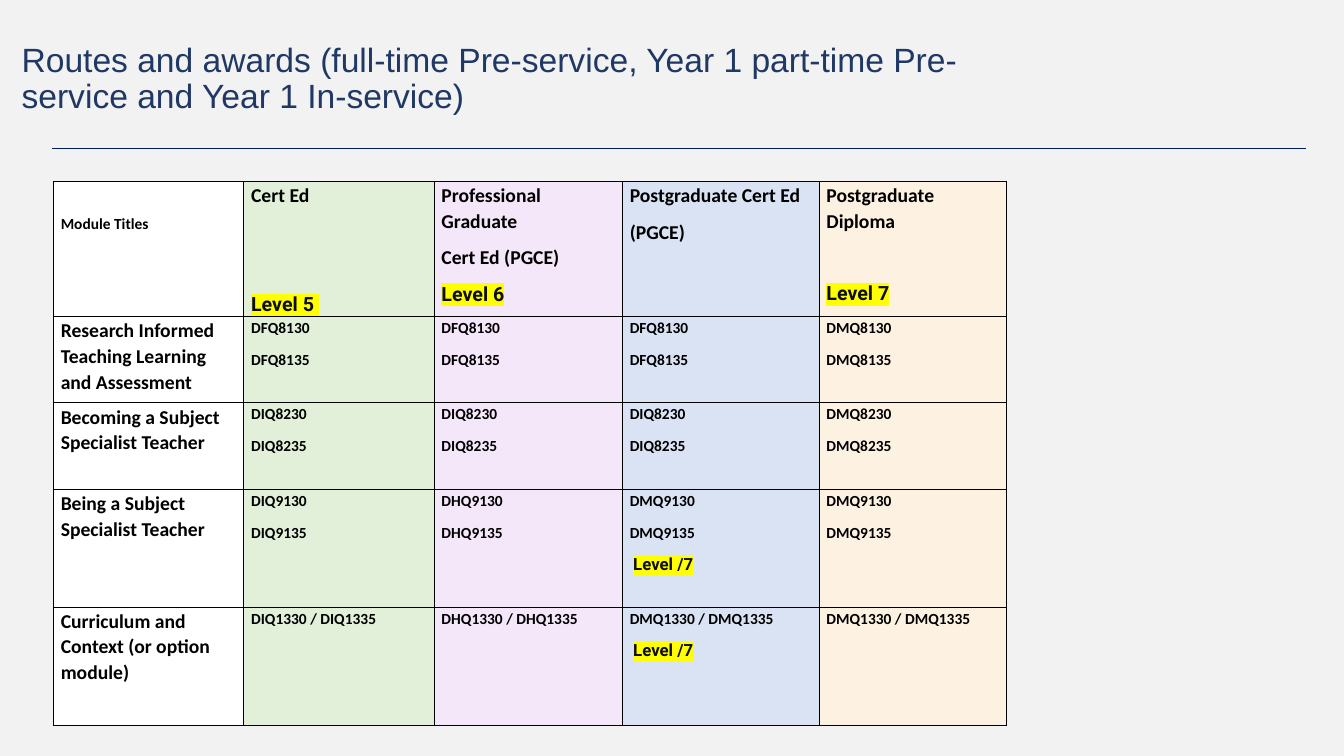
from dataclasses import dataclass

from lxml import etree
from pptx import Presentation
from pptx import util as u
from pptx.dml.color import RGBColor
from pptx.enum import shapes, text
from pptx.oxml import ns

Pt = u.Pt


@dataclass(frozen=True)
class TextStyle:
    size: float
    font: str = "Calibri"
    color: str = "000000"
    bold: bool = True
    highlight: str = ""


@dataclass(frozen=True)
class Theme:
    background: str = "F2F2F2"
    rule: str = "001F60"
    border: str = "000000"
    columns: tuple = ("FFFFFF", "E2F0D9", "F4E7F9", "DAE3F3", "FDF1E1")
    title: TextStyle = TextStyle(24, "Arial", "203864", False)
    heading: TextStyle = TextStyle(14)
    code: TextStyle = TextStyle(11)
    level: TextStyle = TextStyle(14, "Roboto", "0D0D0D", True, "FFFF00")
    small_level: TextStyle = TextStyle(12, "Roboto", "0D0D0D", True, "FFFF00")


@dataclass(frozen=True)
class Line:
    words: str
    style: TextStyle
    before: float = 0
    indent: float = 0


class SlideBuilder:
    def __init__(self, deck, theme):
        self.theme = theme
        self.page = deck.slides.add_slide(deck.slide_layouts[6])
        self.fill(self.page.background.fill, theme.background)

    def fill(self, target, color):
        target.solid()
        target.fore_color.rgb = RGBColor.from_string(color)

    def add_span(self, para, words, style):
        span = para.add_run()
        span.text = words
        font = span.font
        font.size, font.name, font.bold = Pt(style.size), style.font, style.bold
        font.color.rgb = RGBColor.from_string(style.color)
        if style.highlight:
            highlight = etree.Element(ns.qn("a:highlight"))
            etree.SubElement(highlight, ns.qn("a:srgbClr"), val=style.highlight)
            span._r.rPr.find(ns.qn("a:solidFill")).addnext(highlight)

    def add_title(self, words, left, top, width, height):
        box = self.page.shapes.add_textbox(Pt(left), Pt(top), Pt(width), Pt(height))
        frame = box.text_frame
        frame.word_wrap = True
        frame.vertical_anchor = text.MSO_ANCHOR.MIDDLE
        frame.margin_left = 0
        para = frame.paragraphs[0]
        para.line_spacing = 0.9
        self.add_span(para, words, self.theme.title)

    def add_rule(self, left, right, y):
        rule = self.page.shapes.add_connector(
            shapes.MSO_CONNECTOR.STRAIGHT, Pt(left), Pt(y), Pt(right), Pt(y))
        rule.line.width = Pt(0.5)
        rule.line.color.rgb = RGBColor.from_string(self.theme.rule)
        etree.SubElement(rule._element.spPr, ns.qn("a:effectLst"))

    def add_borders(self, cell):
        properties = cell._tc.get_or_add_tcPr()
        for side in ("lnL", "lnR", "lnT", "lnB"):
            edge = etree.SubElement(properties, ns.qn(f"a:{side}"), w=str(Pt(1)))
            paint = etree.SubElement(edge, ns.qn("a:solidFill"))
            etree.SubElement(paint, ns.qn("a:srgbClr"), val=self.theme.border)

    def fill_cell(self, cell, lines, color, top_margin):
        self.add_borders(cell)
        self.fill(cell.fill, color)
        cell.margin_left = cell.margin_right = Pt(5.2)
        cell.margin_top, cell.margin_bottom = Pt(top_margin), 0
        frame = cell.text_frame
        for index, line in enumerate(lines):
            para = frame.add_paragraph() if index else frame.paragraphs[0]
            para.line_spacing = 1.07
            para.space_after = Pt(8)
            if line.before:
                para.space_before = Pt(line.before)
            if line.indent:
                para._p.get_or_add_pPr().set("marL", str(Pt(line.indent)))
            self.add_span(para, line.words, line.style)

    def add_table(self, rows, left, top, widths, heights):
        table = self.page.shapes.add_table(
            len(heights), len(widths), Pt(left), Pt(top),
            Pt(sum(widths)), Pt(sum(heights))).table
        table.first_row = table.horz_banding = False
        for column, width in zip(table.columns, widths):
            column.width = Pt(width)
        for row, height, cells in zip(table.rows, heights, rows):
            row.height = Pt(height)
            for cell, lines, color in zip(row.cells, cells, self.theme.columns):
                title_cell = lines[0].words == "Module Titles"
                self.fill_cell(cell, lines, color, 23 if title_cell else 0.7)


def module_rows(theme):
    headings = [
        [Line("Module Titles", theme.code)],
        [Line("Cert Ed", theme.heading), Line("Level 5 ", theme.level, before=52)],
        [Line("Professional Graduate", theme.heading),
         Line("Cert Ed (PGCE)", theme.heading), Line("Level 6", theme.level)],
        [Line("Postgraduate Cert Ed", theme.heading), Line("(PGCE)", theme.heading)],
        [Line("Postgraduate Diploma", theme.heading),
         Line("Level 7", theme.level, before=26)],
    ]
    modules = [
        ("Research Informed Teaching Learning and Assessment",
         ("DFQ", "DFQ", "DFQ", "DMQ"), ("8130", "8135")),
        ("Becoming a Subject Specialist Teacher",
         ("DIQ", "DIQ", "DIQ", "DMQ"), ("8230", "8235")),
        ("Being a Subject Specialist Teacher",
         ("DIQ", "DHQ", "DMQ", "DMQ"), ("9130", "9135")),
        ("Curriculum and Context\u00a0(or option module)".replace("\u00a0", " "),
         ("DIQ", "DHQ", "DMQ", "DMQ"), ("1330", "1335")),
    ]
    rows = [headings]
    for name, prefixes, numbers in modules:
        cells = [[Line(name, theme.heading)]]
        for prefix in prefixes:
            codes = [prefix + number for number in numbers]
            if numbers[0] == "1330":
                codes = [" / ".join(codes)]
            cells.append([Line(code, theme.code) for code in codes])
        if prefixes[2] == "DMQ":
            cells[3].append(Line("Level /7", theme.small_level, indent=2.5))
        rows.append(cells)
    return rows


def main():
    deck = Presentation()
    deck.slide_width, deck.slide_height = Pt(960), Pt(540)
    theme = Theme()
    slide = SlideBuilder(deck, theme)
    slide.add_rule(37, 933, 106)
    slide.add_title(
        "Routes and awards (full-time Pre-service, Year 1 part-time "
        "Pre-service and Year 1 In-service)", 15.4, 28.8, 727, 56)
    slide.add_table(module_rows(theme), 38.2, 129.6,
                    (136, 136, 134.5, 140.5, 134), (96.5, 61.5, 62, 84, 84.5))
    deck.save("out.pptx")


if __name__ == "__main__":
    main()
